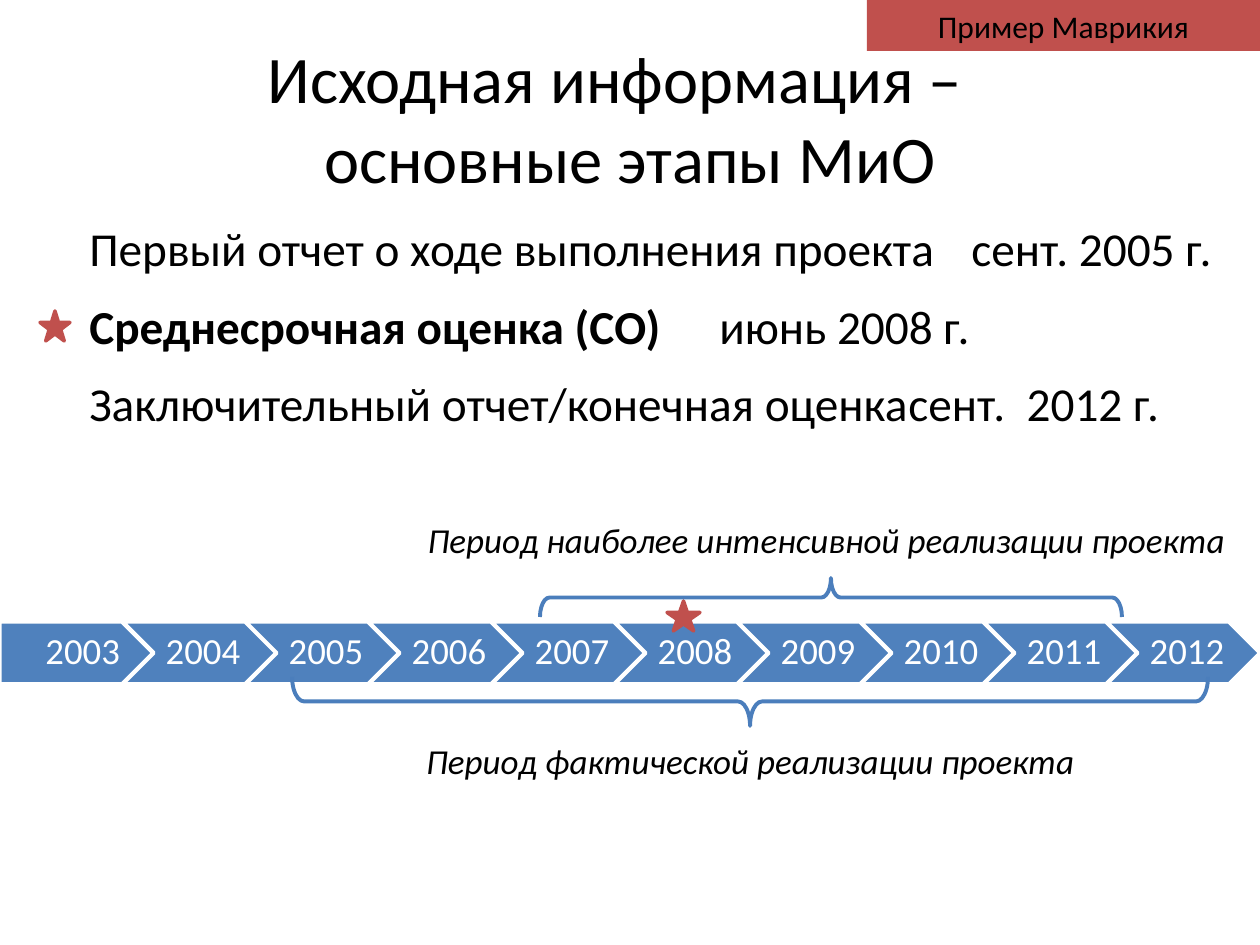
from pptx import Presentation
from pptx.dml.color import RGBColor
from pptx.enum.shapes import MSO_SHAPE
from pptx.enum.text import MSO_ANCHOR, PP_ALIGN
from pptx.util import Emu, Pt

EMU_PER_PX = 914400 / 126
FONT = "Calibri"
BLACK, WHITE = "000000", "FFFFFF"
BLUE, BRACE_BLUE, RED = "4F81BD", "4B7EBC", "C0504D"
LEFT, CENTER = PP_ALIGN.LEFT, PP_ALIGN.CENTER
TOP, MIDDLE = MSO_ANCHOR.TOP, MSO_ANCHOR.MIDDLE
RECTANGLE, STAR = MSO_SHAPE.RECTANGLE, MSO_SHAPE.STAR_5_POINT
PENTAGON, CHEVRON = MSO_SHAPE.PENTAGON, MSO_SHAPE.CHEVRON
RIGHT_BRACE = MSO_SHAPE.RIGHT_BRACE
UP, DOWN = 270, 90


def px(value):
    return Emu(round(value * EMU_PER_PX))


def color(value):
    return RGBColor.from_string(value)


class SlideBuilder:
    """Draws styled elements on one slide, with lengths in px."""

    def __init__(self, slide):
        self.slide = slide

    def fill_text(self, shape, paragraphs, size, text_color=BLACK, align=CENTER,
                  anchor=TOP, italic=False, before=0, spacing=1.0):
        frame = shape.text_frame
        frame.word_wrap = True
        frame.vertical_anchor = anchor
        for index, runs in enumerate(paragraphs):
            paragraph = frame.add_paragraph() if index else frame.paragraphs[0]
            paragraph.alignment = align
            paragraph.space_before = Pt(before)
            paragraph.line_spacing = spacing
            for text, bold in runs:
                if text == "\n":
                    paragraph.add_line_break()
                    continue
                run = paragraph.add_run()
                run.text = text
                run.font.name = FONT
                run.font.size = Pt(size)
                run.font.bold = bold
                run.font.italic = italic
                run.font.color.rgb = color(text_color)

    def text(self, left, top, width, height, paragraphs, size, **style):
        box = self.slide.shapes.add_textbox(px(left), px(top), px(width), px(height))
        self.fill_text(box, paragraphs, size, **style)

    def shape(self, kind, left, top, width, height, fill=None, line=None, weight=2):
        shape = self.slide.shapes.add_shape(kind, px(left), px(top), px(width), px(height))
        shape.shadow.inherit = False
        if fill:
            shape.fill.solid()
            shape.fill.fore_color.rgb = color(fill)
        else:
            shape.fill.background()
        if line:
            shape.line.color.rgb = color(line)
            shape.line.width = Pt(weight)
        else:
            shape.line.fill.background()
        return shape

    def year(self, kind, left, top, width, height, label, left_inset):
        step = self.shape(kind, left, top, width, height, BLUE, WHITE)
        self.fill_text(step, [[(label, False)]], 21, WHITE, anchor=MIDDLE, spacing=0.9)
        frame = step.text_frame
        frame.word_wrap = False
        frame.margin_left, frame.margin_right = px(left_inset), px(4)
        frame.margin_top = frame.margin_bottom = px(8)

    def star(self, left, top, width, height):
        self.shape(STAR, left, top, width, height, RED, RED)

    def brace(self, left, top, width, height, direction):
        shift = (width - height) / 2
        brace = self.shape(RIGHT_BRACE, left + shift, top - shift, height, width,
                           line=BRACE_BLUE, weight=2.25)
        brace.adjustments[0] = 0.245
        brace.rotation = direction

    def tag(self, left, top, width, height, label):
        tag = self.shape(RECTANGLE, left, top, width, height, RED)
        self.fill_text(tag, [[(label, False)]], 18, anchor=MIDDLE)


def main():
    presentation = Presentation()
    presentation.slide_width, presentation.slide_height = px(1260), px(945)
    builder = SlideBuilder(presentation.slides.add_slide(presentation.slide_layouts[6]))

    title = [("Исходная информация –  ", False), ("\n", False),
             ("основные этапы МиО", False)]
    builder.text(0, 38, 1260, 158, [title], 38, anchor=MIDDLE)
    milestones = [
        [("Первый отчет о ходе выполнения проекта\tсент. 2005 г.", False)],
        [("Среднесрочная оценка (СО)", True), ("\tиюнь 2008 г.", False)],
        [("Заключительный отчет/конечная оценка\tсент.  2012 г.", False)],
    ]
    builder.text(77, 213, 1149, 246, milestones, 27, align=LEFT, before=12)

    for index, year in enumerate(range(2003, 2013)):
        kind, left_inset = (CHEVRON, 11) if index else (PENTAGON, 32)
        builder.year(kind, index * 123, 622, 153, 62, str(year), left_inset)

    builder.brace(292, 677, 916, 49, DOWN)
    builder.text(399, 733, 703, 55,
                 [[("Период фактической реализации проекта", False)]], 20, italic=True)
    builder.star(667, 601, 33, 30)
    builder.star(40, 311, 30, 30)
    builder.brace(540, 578, 582, 39, UP)
    builder.text(412, 512, 829, 55,
                 [[("Период наиболее интенсивной реализации проекта", False)]], 20, italic=True)
    builder.tag(867, 0, 393, 51, "Пример Маврикия")

    presentation.save("out.pptx")


if __name__ == "__main__":
    main()
